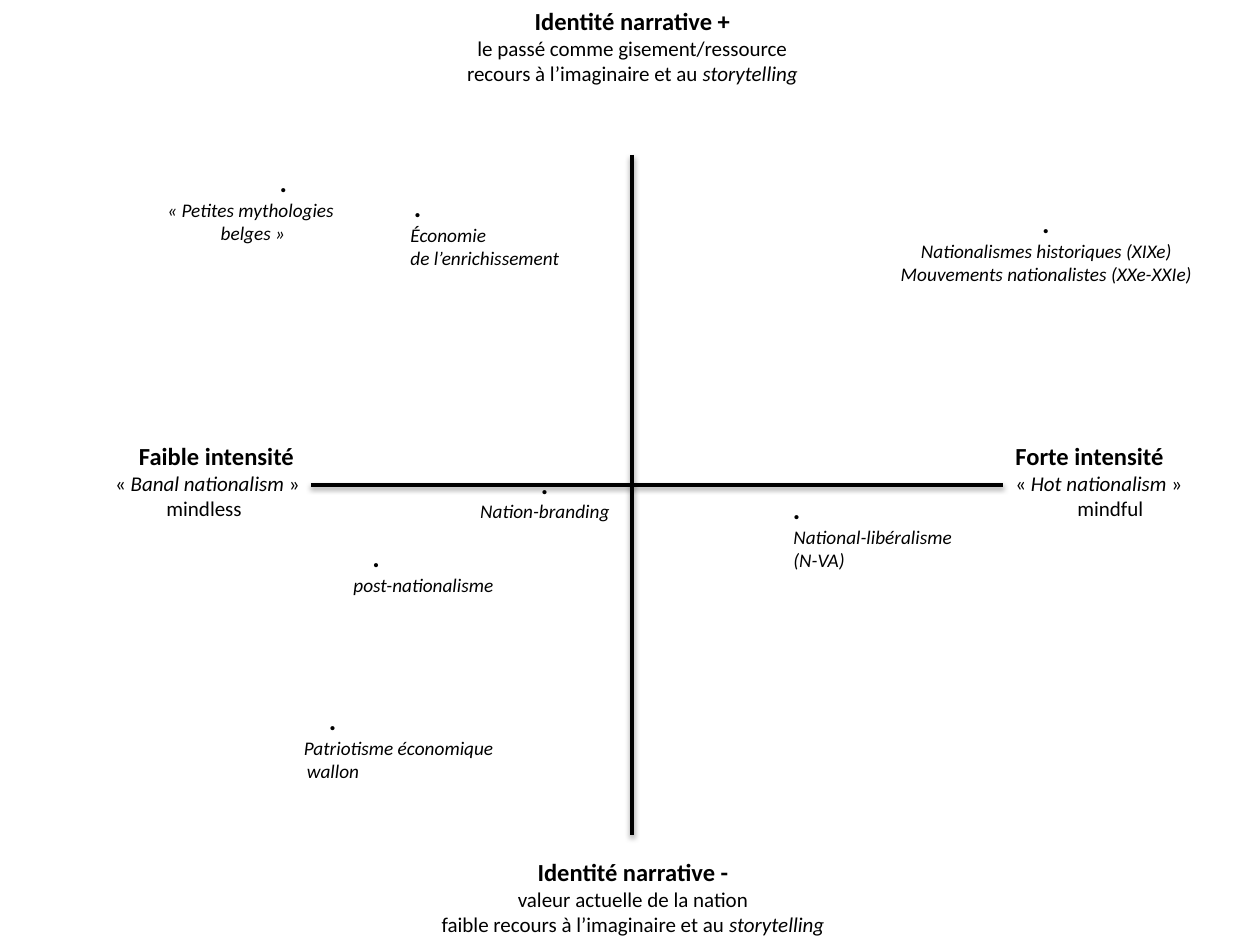
from lxml import etree
from pptx import Presentation
from pptx.dml.color import RGBColor
from pptx.enum.shapes import MSO_CONNECTOR
from pptx.enum.text import PP_ALIGN
from pptx.oxml.ns import qn
from pptx.util import Emu, Pt

PX = 914400 // 126
LEFT, CENTER, RIGHT = PP_ALIGN.LEFT, PP_ALIGN.CENTER, PP_ALIGN.RIGHT
STRAIGHT = MSO_CONNECTOR.STRAIGHT
FONT, INK = "Calibri", "000000"
TAB = 62  # first-line indent

# Style: size, bold, italic
HEADING, DETAIL = (14, True, False), (12, False, False)
DOT, CONCEPT = (16, True, True), (11, False, True)

# Box (left, top, width, height), then lines: text, alignment, first indent,
# and optionally a left margin. Asterisks switch italics.
AXIS_ENDS = [
    ((-34, 435, 346, 145), [
        ("Faible intensité ", RIGHT, 0),
        ("« *Banal nationalism* »", RIGHT, 0),
        ("mindless", LEFT, 188)]),
    ((1003, 435, 370, 145), [
        ("Forte intensité", LEFT, 0),
        ("« *Hot nationalism* »", LEFT, 0),
        ("mindful", LEFT, TAB)]),
    ((262, 0, 741, 202), [
        ("Identité narrative +", CENTER, 0),
        ("le passé comme gisement/ressource", CENTER, 0),
        ("recours à l’imaginaire et au *storytelling*", CENTER, 0)]),
    ((213, 851, 840, 155), [
        ("Identité narrative -", CENTER, 0),
        ("valeur actuelle de la nation", CENTER, 0),
        ("faible recours à l’imaginaire et au *storytelling*", CENTER, 0)]),
]
CONCEPTS = [
    ((160, 696, 346, 159), [
        (".", CENTER, 0),
        ("Patriotisme économique", RIGHT, 0),
        ("wallon", CENTER, 0)]),
    ((360, 460, 370, 126), [
        (".", CENTER, 0),
        ("Nation-branding", CENTER, 0)]),
    ((-13, 158, 470, 195), [
        (".", CENTER, TAB, TAB),
        ("« Petites mythologies ", CENTER, TAB),
        ("belges »", CENTER, TAB)]),
    ((336, 183, 296, 145), [
        (".", LEFT, 66),
        ("Économie", LEFT, TAB),
        ("de l’enrichissement", LEFT, TAB)]),
    ((781, 485, 346, 195), [
        (".", LEFT, 0),
        ("National-libéralisme", LEFT, 0),
        ("(N-VA)", LEFT, 0)]),
    ((707, 199, 617, 170), [
        (".", CENTER, TAB),
        ("Nationalismes historiques (XIXe)", CENTER, TAB),
        ("Mouvements nationalistes (XXe-XXIe)", CENTER, TAB)]),
    ((185, 533, 321, 123), [
        (".", CENTER, TAB),
        ("post-nationalisme", RIGHT, 0)]),
]
AXES = [(632, 155, 632, 835), (311, 485, 1003, 485)]


def px(*lengths):
    return [Emu(length * PX) for length in lengths]


def color(hex_string):
    return RGBColor.from_string(hex_string)


def add_line(paragraph, style, text, align, indent, margin=0):
    size, bold, italic = style
    paragraph.alignment = align
    properties = paragraph._p.get_or_add_pPr()
    properties.set("marL", str(margin * PX))
    properties.set("indent", str(indent * PX))
    for i, part in enumerate(text.split("*")):
        if not part:
            continue
        run = paragraph.add_run()
        run.text = part
        font = run.font
        font.name, font.size, font.bold = FONT, Pt(size), bold
        font.italic = italic or i % 2 == 1
        font.color.rgb = color(INK)


def add_label(slide, box, lines, first_style, other_style):
    frame = slide.shapes.add_textbox(*px(*box)).text_frame
    frame.word_wrap = True
    for i, line in enumerate(lines):
        paragraph = frame.add_paragraph() if i else frame.paragraphs[0]
        add_line(paragraph, other_style if i else first_style, *line)


def add_axis(slide, ends):
    axis = slide.shapes.add_connector(STRAIGHT, *px(*ends))
    axis.line.color.rgb = color(INK)
    axis.line.width = Pt(2)
    effects = etree.SubElement(axis._element.spPr, qn("a:effectLst"))
    shadow = etree.SubElement(
        effects, qn("a:outerShdw"), blurRad=str(Pt(3.1)), dist=str(Pt(1.6)),
        dir="5400000", rotWithShape="0")
    tint = etree.SubElement(shadow, qn("a:srgbClr"), val=INK)
    etree.SubElement(tint, qn("a:alpha"), val="38000")


def main():
    deck = Presentation()
    deck.slide_width, deck.slide_height = px(1260, 945)
    slide = deck.slides.add_slide(deck.slide_layouts[6])
    for box, lines in AXIS_ENDS:
        add_label(slide, box, lines, HEADING, DETAIL)
    for ends in AXES:
        add_axis(slide, ends)
    for box, lines in CONCEPTS:
        add_label(slide, box, lines, DOT, CONCEPT)
    deck.save("out.pptx")


if __name__ == "__main__":
    main()
